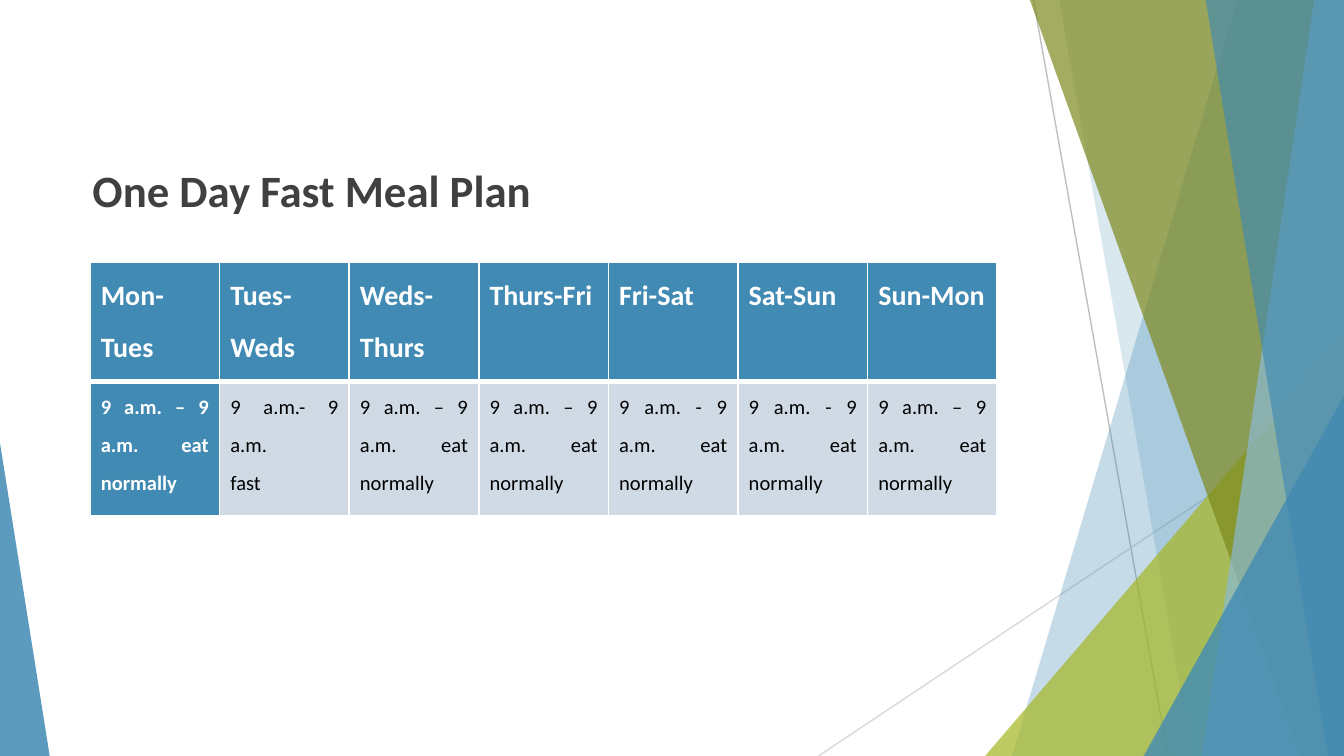
import pptx
import pptx.util
import pptx.dml.color
import pptx.enum.shapes
import pptx.enum.text
import pptx.oxml
import pptx.oxml.ns
from lxml import etree

Inches, Pt = pptx.util.Inches, pptx.util.Pt
RGBColor = pptx.dml.color.RGBColor
qn = pptx.oxml.ns.qn

W = 10
H = W * 9 / 16
FONT = "Calibri"
WHITE = RGBColor(0xFF, 0xFF, 0xFF)
BLACK = RGBColor(0, 0, 0)
DARK = RGBColor(0x40, 0x40, 0x40)
BLUE = RGBColor(0x41, 0x8A, 0xB3)
SKY = RGBColor(0x8A, 0xBA, 0xD4)
PALE = RGBColor(0xCF, 0xDA, 0xE5)
LIME = RGBColor(0xA6, 0xB7, 0x27)
OLIVE = RGBColor(0x7D, 0x89, 0x1D)
GREY = RGBColor(0xBF, 0xBF, 0xBF)
LIGHT_GREY = RGBColor(0xD9, 0xD9, 0xD9)

COLS = 7
TABLE_LEFT, TABLE_TOP, TABLE_W = 0.67, 1.95, 6.75
ROW_HEIGHTS = (0.89, 1)
EAT = "9 a.m. – 9 a.m. eat normally"
EAT_HYPHEN = EAT.replace("–", "-")
DAYS = ["Mon-Tues", "Tues-Weds", "Weds-Thurs", "Thurs-Fri",
        "Fri-Sat", "Sat-Sun", "Sun-Mon"]
MEALS = [EAT, "9 a.m.- 9 a.m. \nfast", EAT, EAT, EAT_HYPHEN, EAT_HYPHEN, EAT]


def paint(sp, color, opacity):
    """Flat fill with an opacity in percent, no outline, no shadow."""
    sp.shadow.inherit = False
    sp.line.fill.background()
    sp.fill.solid()
    sp.fill.fore_color.rgb = color
    clr = sp._element.spPr.find(qn("a:solidFill"))[0]
    etree.SubElement(clr, qn("a:alpha"), val=str(opacity * 1000))


def add_line(s, x1, y1, x2, y2, color):
    ln = s.shapes.add_connector(pptx.enum.shapes.MSO_CONNECTOR.STRAIGHT,
                                *map(Inches, (x1, y1, x2, y2)))
    ln.line.color.rgb = color
    ln.line.width = Pt(0.75)
    etree.SubElement(ln._element.spPr, qn("a:effectLst"))


def add_band(s, top_x, bottom_x, color, opacity):
    """Full-height band from a slanted left edge to the slide's right edge."""
    top = -0.01
    fb = s.shapes.build_freeform(Inches(top_x), Inches(top))
    fb.add_line_segments([(Inches(x), Inches(y)) for x, y in
                          ((W, top), (W, H), (bottom_x, H))])
    paint(fb.convert_to_shape(), color, opacity)


def add_wedge(s, left, width, height, apex, color, opacity):
    """Triangle standing on the slide's bottom edge; apex is a share of width."""
    sp = s.shapes.add_shape(pptx.enum.shapes.MSO_SHAPE.ISOSCELES_TRIANGLE,
                            Inches(left), Inches(H - height),
                            Inches(width), Inches(height))
    sp.adjustments[0] = apex
    paint(sp, color, opacity)


def add_decoration(s):
    add_line(s, 7.69, 0, 8.69, H, GREY)
    add_line(s, W, 3.02, 6.09, H, LIGHT_GREY)
    add_band(s, 9.21, 7.53, BLUE, 30)
    add_band(s, 7.88, 8.87, BLUE, 20)
    add_wedge(s, 7.33, 2.67, 3.12, 1, LIME, 72)
    add_band(s, 7.66, 9.68, OLIVE, 70)
    add_band(s, 9.78, 8.94, SKY, 70)
    add_band(s, 8.97, 9.88, BLUE, 65)
    add_wedge(s, 8.51, 1.49, 2.68, 1, BLUE, 80)
    add_wedge(s, 0, 0.37, 2.33, 0, BLUE, 85)


def style_run(r, size, color, bold):
    r.font.name = FONT
    r.font.size = Pt(size)
    r.font.bold = bold
    r.font.color.rgb = color


def add_title(s, text):
    tf = s.shapes.add_textbox(Inches(0.59), Inches(1.16),
                              Inches(4.57), Inches(0.63)).text_frame
    tf.word_wrap = True
    tf.text = text
    p = tf.paragraphs[0]
    p.space_before = Pt(7.5)
    style_run(p.runs[0], 24, DARK, True)


def set_borders(cell, **widths):
    """White borders; widths in points by side: L, R, T, B."""
    tcPr = cell._tc.get_or_add_tcPr()
    for side, width in widths.items():
        ln = etree.SubElement(tcPr, qn(f"a:ln{side}"), w=str(int(Pt(width))))
        fill = etree.SubElement(ln, qn("a:solidFill"))
        etree.SubElement(fill, qn("a:srgbClr"), val=str(WHITE))


def fill_cell(cell, text, size, color, bold, fill):
    cell.margin_left = cell.margin_right = Inches(0.08)
    cell.margin_top = cell.margin_bottom = 0
    cell.fill.solid()
    cell.fill.fore_color.rgb = fill
    cell.text_frame.text = text
    for p in cell.text_frame.paragraphs:
        p.alignment = pptx.enum.text.PP_ALIGN.JUSTIFY
        p.line_spacing = 1.5
        style_run(p.runs[0], size, color, bold)


def add_plan(s):
    table = s.shapes.add_table(2, COLS, Inches(TABLE_LEFT), Inches(TABLE_TOP),
                               Inches(TABLE_W), Inches(sum(ROW_HEIGHTS))).table
    for row, height in zip(table.rows, ROW_HEIGHTS):
        row.height = Inches(height)
    for i, (day, meal) in enumerate(zip(DAYS, MEALS)):
        table.columns[i].width = Inches(TABLE_W / COLS)
        head, body = table.cell(0, i), table.cell(1, i)
        set_borders(head, L=1, R=1, T=1, B=3)
        set_borders(body, L=1, R=1, T=3, B=1)
        fill_cell(head, day, 15, WHITE, True, BLUE)
        if i == 0:
            fill_cell(body, meal, 11, WHITE, True, BLUE)
        else:
            fill_cell(body, meal, 11, BLACK, False, PALE)


def main():
    prs = pptx.Presentation()
    prs.slide_width, prs.slide_height = Inches(W), Inches(H)
    s = prs.slides.add_slide(prs.slide_layouts[6])
    add_decoration(s)
    add_title(s, "One Day Fast Meal Plan")
    add_plan(s)
    prs.save("out.pptx")


if __name__ == "__main__":
    main()
